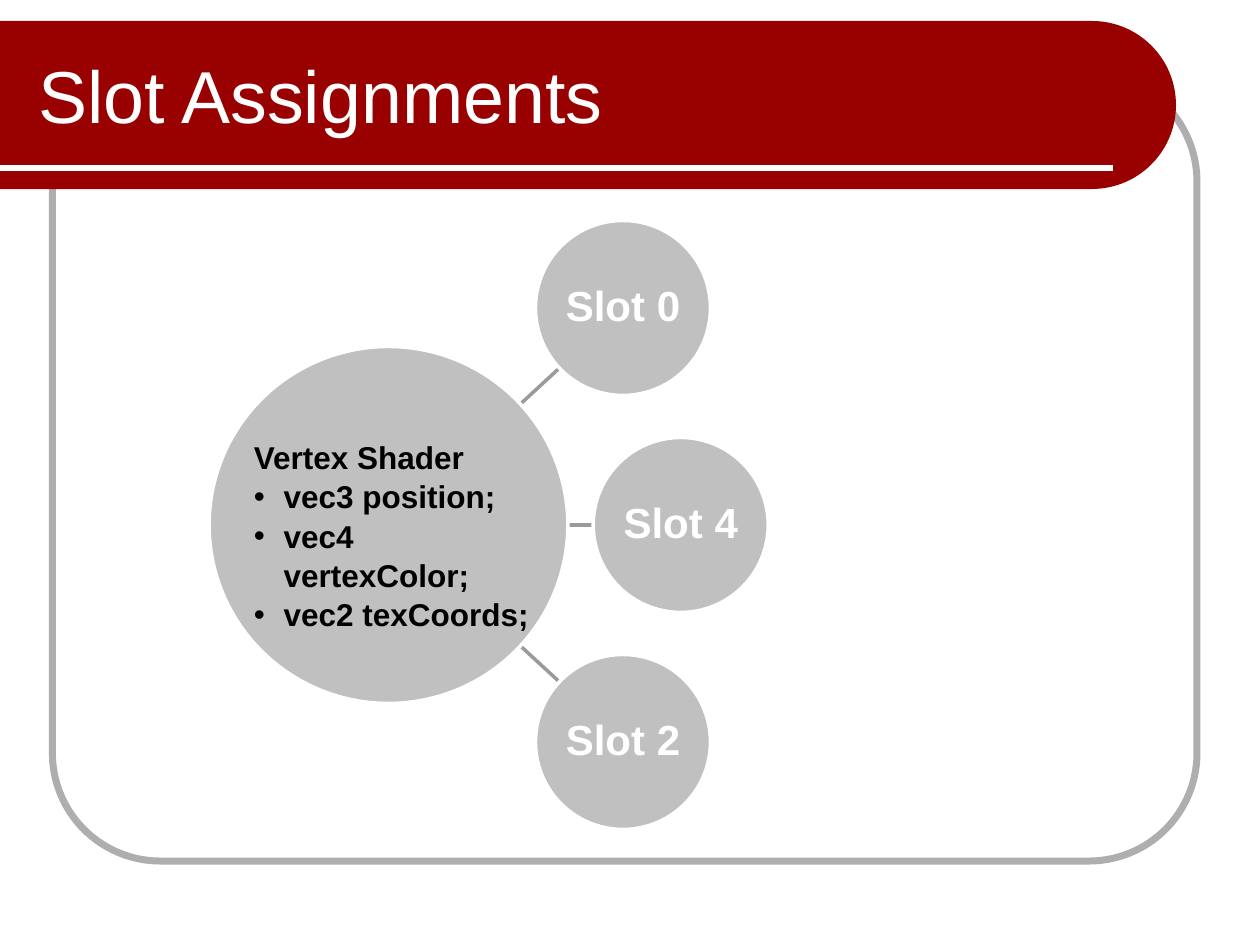
from dataclasses import dataclass
from math import cos, pi, sin

from lxml.etree import SubElement
from pptx import Presentation
from pptx.dml.color import RGBColor
from pptx.enum.shapes import MSO_CONNECTOR as Connector, MSO_SHAPE as Shape
from pptx.enum.text import MSO_ANCHOR as Anchor, PP_ALIGN as Align
from pptx.oxml.ns import qn
from pptx.util import Pt


@dataclass(frozen=True)
class Theme:
    """Colours, type sizes and font of the slide."""
    red: RGBColor = RGBColor(0x99, 0x00, 0x00)
    white: RGBColor = RGBColor(0xFF, 0xFF, 0xFF)
    black: RGBColor = RGBColor(0x00, 0x00, 0x00)
    frame: RGBColor = RGBColor(0xAE, 0xAE, 0xAE)
    circle: RGBColor = RGBColor(0xC0, 0xC0, 0xC0)
    spoke: RGBColor = RGBColor(0x9A, 0x9A, 0x9A)
    font: str = "Arial"
    title_size: int = 42
    slot_size: int = 24
    shader_size: int = 18


THEME = Theme()


def set_outline(shape, color, width):
    """Give a shape or connector a solid line."""
    shape.line.color.rgb = color
    shape.line.width = Pt(width)


def add_line(slide, start, end, color, width):
    """Draw a straight line without shadow."""
    line = slide.shapes.add_connector(
        Connector.STRAIGHT, *(Pt(value) for value in (*start, *end)))
    set_outline(line, color, width)
    SubElement(line._element.spPr, qn("a:effectLst"))


def add_text(slide, box, lines, size, color, bold=False, inset=(7.2, 3.6), anchor=Anchor.MIDDLE):
    """Place a wrapped text box and return its paragraphs."""
    text_frame = slide.shapes.add_textbox(*(Pt(value) for value in box)).text_frame
    text_frame.word_wrap = True
    text_frame.vertical_anchor = anchor
    text_frame.margin_left = text_frame.margin_right = Pt(inset[0])
    text_frame.margin_top = text_frame.margin_bottom = Pt(inset[1])
    text_frame.text = "\n".join(lines)
    for paragraph in text_frame.paragraphs:
        for run in paragraph.runs:
            run.font.name = THEME.font
            run.font.size = Pt(size)
            run.font.bold = bold
            run.font.color.rgb = color
    return text_frame.paragraphs


def add_bullet(paragraph, indent):
    """Give a paragraph a round bullet with a hanging indent."""
    properties = paragraph._p.get_or_add_pPr()
    properties.set("marL", str(Pt(indent)))
    properties.set("indent", str(-Pt(indent)))
    SubElement(properties, qn("a:buFont"), typeface=THEME.font)
    SubElement(properties, qn("a:buChar"), char="•")


def add_frame(slide, box):
    """Draw the rounded outline around the content."""
    frame = slide.shapes.add_shape(Shape.ROUNDED_RECTANGLE, *(Pt(value) for value in box))
    frame.adjustments[0] = 0.137
    frame.shadow.inherit = False
    frame.fill.background()
    set_outline(frame, THEME.frame, 4)


def add_banner(slide, box, title):
    """Draw the title band with its round end, underline and title."""
    left, top, width, height = box
    radius = height / 2
    center_x, center_y = left + width - radius, top + radius
    steps = 60
    angles = [pi * step / steps - pi / 2 for step in range(steps + 1)]
    arc = [(Pt(center_x + radius * cos(angle)), Pt(center_y + radius * sin(angle)))
           for angle in angles]
    builder = slide.shapes.build_freeform(Pt(left), Pt(top))
    builder.add_line_segments(arc + [(Pt(left), Pt(top + height))], close=True)
    band = builder.convert_to_shape()
    band.shadow.inherit = False
    band.fill.solid()
    band.fill.fore_color.rgb = THEME.red
    band.line.fill.background()
    rule_y = top + height - 12
    add_line(slide, (left, rule_y), (left + width - 36, rule_y), THEME.white, 3)
    add_text(slide, (left + 15, top + 6, 561, 72), [title], THEME.title_size, THEME.white)


def add_circle(slide, box):
    """Draw a grey circle with a white rim."""
    circle = slide.shapes.add_shape(Shape.OVAL, *(Pt(value) for value in box))
    circle.shadow.inherit = False
    circle.fill.solid()
    circle.fill.fore_color.rgb = THEME.circle
    set_outline(circle, THEME.white, 2)


def add_slot(slide, box, label):
    """Draw a slot circle with its centred label."""
    left, top, size, _ = box
    add_circle(slide, box)
    margin = size * 0.145
    inner = size - 2 * margin
    paragraph, = add_text(slide, (left + margin, top + margin, inner, inner), [label],
                          THEME.slot_size, THEME.white, bold=True, inset=(1.4, 1.4))
    paragraph.alignment = Align.CENTER
    paragraph.line_spacing = 0.9


def add_slot_diagram(slide, box, heading, inputs, slots):
    """Draw the shader circle, its inputs and the slots fanned out on its right."""
    left, top, _, height = box
    hub_width, hub_height, slot_size = 205, 204, 100
    middle = top + height / 2
    pitch = (height - slot_size) / (len(slots) - 1)
    slot_lefts = [left + 186.5, left + 219.5, left + 186.5]
    spokes = [((281, 246), (319.5, 210.5)), ((281, 300), (339, 300)), ((281, 354), (319.5, 389.5))]
    for start, end in spokes:
        add_line(slide, start, end, THEME.spoke, 2)
    add_circle(slide, (left, middle - hub_height / 2, hub_width, hub_height))
    for index, (slot_left, label) in enumerate(zip(slot_lefts, slots)):
        add_slot(slide, (slot_left, top + index * pitch, slot_size, slot_size), label)
    paragraphs = add_text(slide, (left + 18.5, middle - 54, 173.5, 116.5), [heading, *inputs],
                          THEME.shader_size, THEME.black, bold=True, anchor=Anchor.TOP)
    for paragraph in paragraphs:
        paragraph.line_spacing = 1.04
    for paragraph in paragraphs[1:]:
        add_bullet(paragraph, 17)


def main():
    """Build the slide and save it."""
    presentation = Presentation()
    presentation.slide_width, presentation.slide_height = Pt(720), Pt(540)
    slide = presentation.slides.add_slide(presentation.slide_layouts[6])
    add_frame(slide, (30, 42, 654, 450))
    add_banner(slide, (0, 12, 672, 96), "Slot Assignments")
    add_slot_diagram(slide, (119.5, 126, 319.5, 348), "Vertex Shader",
                     ["vec3 position;", "vec4 vertexColor;", "vec2 texCoords;"],
                     ["Slot 0", "Slot 4", "Slot 2"])
    presentation.save("out.pptx")


if __name__ == "__main__":
    main()
